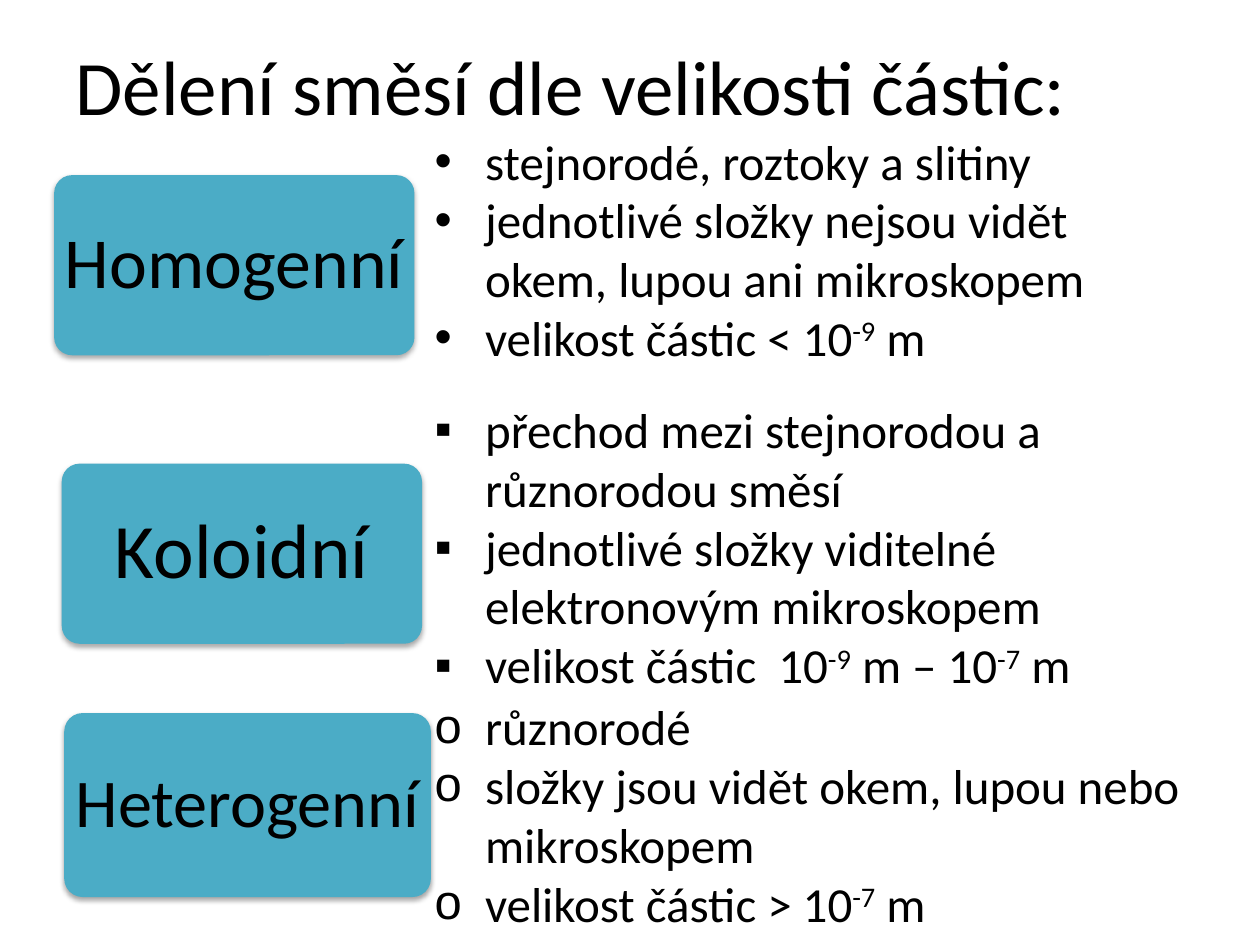
from lxml.etree import SubElement
from pptx import Presentation
from pptx.dml.color import RGBColor
from pptx.enum.shapes import MSO_SHAPE
from pptx.enum.text import MSO_ANCHOR, MSO_AUTO_SIZE, PP_ALIGN
from pptx.oxml.ns import qn
from pptx.util import Inches, Pt

TEAL = RGBColor(0x4B, 0xAC, 0xC6)
BLACK = RGBColor(0, 0, 0)
FONT = "Calibri"
TITLE = "Dělení směsí dle velikosti částic:"

MIXTURES = [
    ("Homogenní", 41, (0.43, 1.39, 2.86, 1.43), "•", (3.35, 0.99, 6.06, 2.29), [
        ["stejnorodé, roztoky a slitiny"],
        ["jednotlivé složky nejsou vidět okem, lupou ani mikroskopem"],
        ["velikost částic < 10", "-9", " m"],
    ]),
    ("Koloidní", 44, (0.49, 3.68, 2.86, 1.43), "▪", (3.35, 3.12, 6.57, 2.76), [
        ["přechod mezi stejnorodou a různorodou směsí"],
        ["jednotlivé složky viditelné elektronovým mikroskopem"],
        ["velikost částic  10", "-9", " m – 10", "-7", " m"],
    ]),
    ("Heterogenní", 39, (0.51, 5.66, 2.91, 1.46), "o", (3.35, 5.48, 6.65, 2.29), [
        ["různorodé"],
        ["složky jsou vidět okem, lupou nebo mikroskopem"],
        ["velikost částic > 10", "-7", " m"],
    ]),
]


def place(sp, box):
    """Move a shape to a box given in inches."""
    sp.left, sp.top, sp.width, sp.height = (Inches(v) for v in box)


def add_run(p, text, size, superscript=False):
    """Append a formatted run to a paragraph."""
    r = p.add_run()
    r.text = text
    r.font.name, r.font.size, r.font.bold = FONT, Pt(size), False
    r.font.color.rgb = BLACK
    if superscript:
        r.font._element.set("baseline", "30000")


def add_shadow(sp):
    """Give a shape a soft shadow falling straight down."""
    sp.shadow.inherit = False
    effects = sp._element.spPr.find(qn("a:effectLst"))
    shadow = SubElement(effects, qn("a:outerShdw"), blurRad=str(Pt(3.1)),
                        dist=str(Pt(1.8)), dir="5400000", rotWithShape="0")
    color = SubElement(shadow, qn("a:srgbClr"), val=str(BLACK))
    SubElement(color, qn("a:alpha"), val="35000")


def set_bullet(p, char):
    """Give a paragraph a hanging bullet."""
    pPr = p._p.get_or_add_pPr()
    pPr.set("marL", str(Inches(0.4)))
    pPr.set("indent", str(Inches(-0.4)))
    SubElement(pPr, qn("a:buChar"), char=char)


def fill_title(sp, box):
    """Write the slide title into its placeholder."""
    place(sp, box)
    tf = sp.text_frame
    tf.vertical_anchor = MSO_ANCHOR.MIDDLE
    p = tf.paragraphs[0]
    p.alignment = PP_ALIGN.LEFT
    add_run(p, TITLE, 44)


def add_label(s, box, text, size):
    """Add a rounded box naming a mixture type on one line."""
    sp = s.shapes.add_shape(MSO_SHAPE.ROUNDED_RECTANGLE, *(Inches(v) for v in box))
    sp.adjustments[0] = 0.1
    sp.fill.solid()
    sp.fill.fore_color.rgb = TEAL
    sp.line.fill.background()
    add_shadow(sp)
    tf = sp.text_frame
    tf.word_wrap = False
    tf.vertical_anchor = MSO_ANCHOR.MIDDLE
    tf.margin_left = tf.margin_right = tf.margin_top = tf.margin_bottom = Inches(0.03)
    p = tf.paragraphs[0]
    p.alignment = PP_ALIGN.CENTER
    p.line_spacing = 0.9
    add_run(p, text, size)


def fill_list(sp, box, char, items):
    """Write a mixture's properties, every second run of an item superscript."""
    place(sp, box)
    tf = sp.text_frame
    tf.word_wrap = True
    tf.auto_size = MSO_AUTO_SIZE.SHAPE_TO_FIT_TEXT
    tf.vertical_anchor = MSO_ANCHOR.TOP
    for i, runs in enumerate(items):
        p = tf.add_paragraph() if i else tf.paragraphs[0]
        p.space_before = Pt(0)
        set_bullet(p, char)
        for j, text in enumerate(runs):
            add_run(p, text, 28, superscript=j % 2 == 1)


def main():
    """Build and save the slide."""
    prs = Presentation()
    prs.slide_width, prs.slide_height = Inches(10), Inches(7.5)
    s = prs.slides.add_slide(prs.slide_layouts.get_by_name("Comparison"))
    title, *bodies = s.placeholders
    fill_title(title, (0.5, 0.05, 9, 1.25))
    for body, (name, size, label_box, char, list_box, items) in zip(bodies, MIXTURES):
        add_label(s, label_box, name, size)
        fill_list(body, list_box, char, items)
    for spare in bodies[len(MIXTURES):]:
        spare._element.getparent().remove(spare._element)
    prs.save("out.pptx")


if __name__ == "__main__":
    main()
